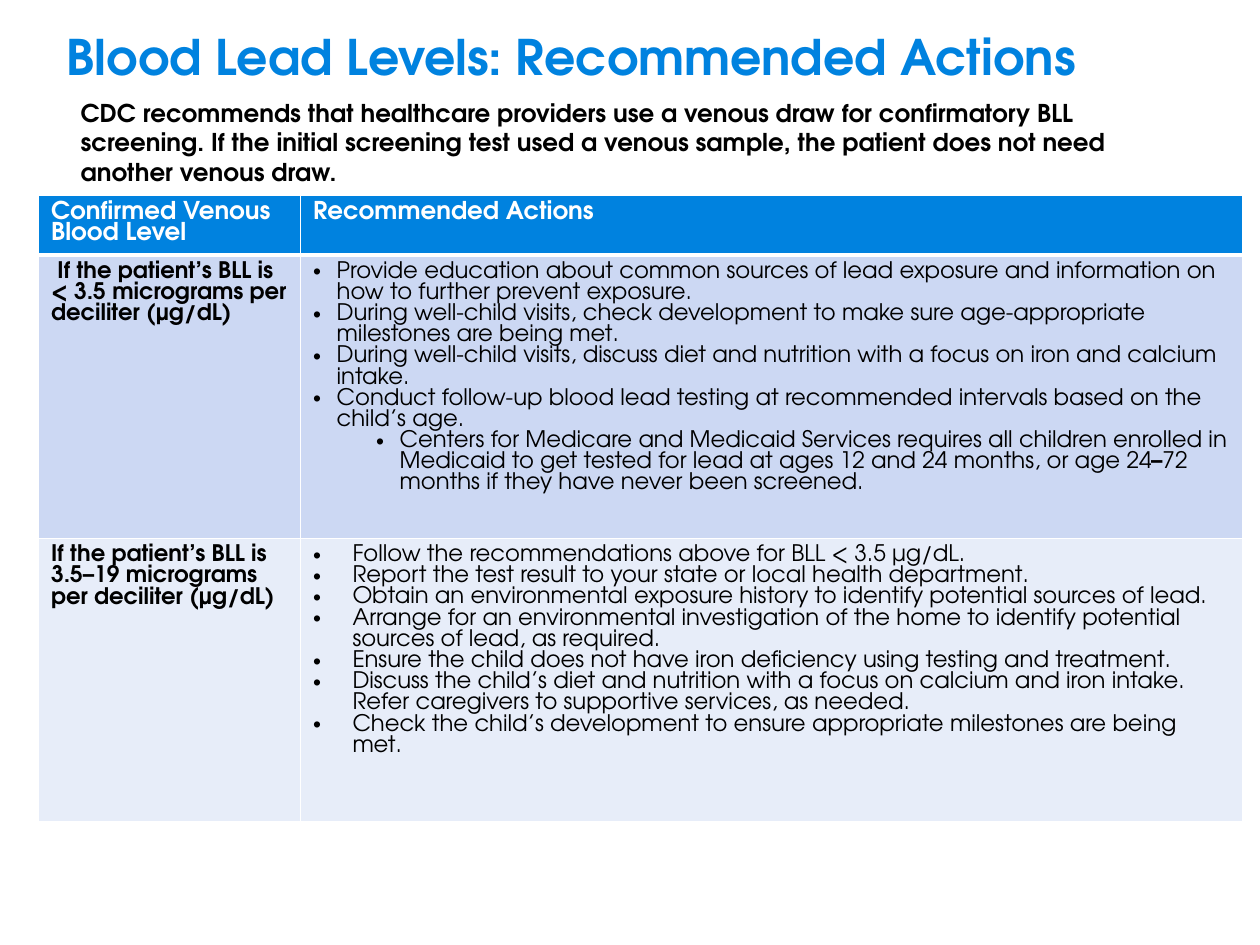
from lxml import etree
from pptx import Presentation
from pptx.dml.color import RGBColor
from pptx.enum.text import MSO_ANCHOR
from pptx.oxml.ns import qn
from pptx.util import Pt

MIDDLE, TOP = MSO_ANCHOR.MIDDLE, MSO_ANCHOR.TOP

THEME = {
    "font": "TeX Gyre Adventor",
    "blue": "0082DF", "white": "FFFFFF", "black": "000000",
    "bands": ["CCD8F3", "E7EDF9"],
    "title": 28, "lead": 14, "body": 13,
    "lead_gap": 16.75, "head_gap": 12.5, "body_gap": 12.1,
}

TITLE = "Blood Lead Levels: Recommended Actions"
INTRO = ("CDC recommends that healthcare providers use a venous draw for "
         "confirmatory BLL screening. If the initial screening test used a "
         "venous sample, the patient does not need another venous draw.")
HEADS = ["Confirmed Venous Blood Level", "Recommended Actions"]

# Each row: blood level, hanging indent, actions as (level, text or runs).
ROWS = [
    (" If the patient’s BLL is < 3.5 micrograms per deciliter (μg/dL)", 13.5, [
        (0, "Provide education about common sources of lead exposure and "
            "information on how to further prevent exposure."),
        (0, "During well-child visits, check development to make sure "
            "age-appropriate milestones are being met."),
        (0, "During well-child visits, discuss diet and nutrition with a "
            "focus on iron and calcium intake."),
        (0, "Conduct follow-up blood lead testing at recommended intervals "
            "based on the child’s age."),
        (1, [("Centers for Medicare and Medicaid Services requires all "
              "children enrolled in Medicaid to get tested for lead at ages "
              "12 and 24 months, or age 24", False),
             ("–", True),
             ("72 months if they have never been screened.", False)]),
    ]),
    ("If the patient’s BLL is 3.5–19 micrograms per deciliter (μg/dL)", 22.5, [
        (0, "Follow the recommendations above for BLL < 3.5 μg/dL."),
        (0, "Report the test result to your state or local health department."),
        (0, "Obtain an environmental exposure history to identify potential "
            "sources of lead."),
        (0, "Arrange for an environmental investigation of the home to "
            "identify potential sources of lead, as required."),
        (0, "Ensure the child does not have iron deficiency using testing "
            "and treatment."),
        (0, "Discuss the child’s diet and nutrition with a focus on calcium "
            "and iron intake. Refer caregivers to supportive services, as "
            "needed."),
        (0, "Check the child’s development to ensure appropriate milestones "
            "are being met."),
    ]),
]

COLS = [149.75, 538.5]
HEIGHTS = [34, 162, 162]
STEP = 36  # extra indent of a nested bullet


def write(para, text, size, color, bold, gap=None):
    """Fill a paragraph with a string, or with (text, bold) runs."""
    if isinstance(text, str):
        para.add_run().text = text
        para.font.bold = bold
    else:
        for part, strong in text:
            run = para.add_run()
            run.text = part
            run.font.bold = strong
    para.font.name = THEME["font"]
    para.font.size = Pt(size)
    para.font.color.rgb = RGBColor.from_string(color)
    if gap:
        para.line_spacing = Pt(gap)


def add_dot(para, level, hang):
    para.level = level
    props = para._p.get_or_add_pPr()
    props.set("marL", str(Pt(hang + level * STEP)))
    props.set("indent", str(-Pt(hang)))
    etree.SubElement(props, qn("a:buFont")).set("typeface", "Arial")
    etree.SubElement(props, qn("a:buChar")).set("char", "•")


def paint(cell, color, base=1):
    """Set fill and white borders; base is the bottom border's width."""
    cell.fill.solid()
    cell.fill.fore_color.rgb = RGBColor.from_string(color)
    props = cell._tc.get_or_add_tcPr()
    sides = [("a:lnL", 1), ("a:lnR", 1), ("a:lnT", 1), ("a:lnB", base)]
    for pos, (tag, width) in enumerate(sides):
        line = etree.Element(qn(tag), w=str(Pt(width)))
        fill = etree.SubElement(line, qn("a:solidFill"))
        etree.SubElement(fill, qn("a:srgbClr")).set("val", THEME["white"])
        props.insert(pos, line)


def add_text(slide, box, anchor):
    frame = slide.shapes.add_textbox(*map(Pt, box)).text_frame
    frame.word_wrap = True
    frame.vertical_anchor = anchor
    return frame.paragraphs[0]


def add_grid(slide):
    grid = slide.shapes.add_table(
        len(HEIGHTS), len(COLS), Pt(22), Pt(111.75),
        Pt(sum(COLS)), Pt(sum(HEIGHTS))).table
    for col, width in zip(grid.columns, COLS):
        col.width = Pt(width)
    for row, height in zip(grid.rows, HEIGHTS):
        row.height = Pt(height)

    for col, head in enumerate(HEADS):
        cell = grid.cell(0, col)
        paint(cell, THEME["blue"], 3)
        write(cell.text_frame.paragraphs[0], head, THEME["lead"],
              THEME["white"], True, THEME["head_gap"])

    style = THEME["body"], THEME["black"]
    gap = THEME["body_gap"]
    for row, (label, hang, acts) in enumerate(ROWS, 1):
        left, right = grid.cell(row, 0), grid.cell(row, 1)
        for cell in (left, right):
            paint(cell, THEME["bands"][row - 1])
        write(left.text_frame.paragraphs[0], label, *style, True, gap)
        frame = right.text_frame
        for pos, (level, text) in enumerate(acts):
            para = frame.add_paragraph() if pos else frame.paragraphs[0]
            add_dot(para, level, hang)
            write(para, text, *style, False, gap)


def main():
    deck = Presentation()
    deck.slide_width, deck.slide_height = Pt(720), Pt(540)
    slide = deck.slides.add_slide(deck.slide_layouts[6])
    write(add_text(slide, (31, 8.5, 648, 47), MIDDLE), TITLE,
          THEME["title"], THEME["blue"], True)
    add_grid(slide)
    intro = add_text(slide, (39, 52.5, 648, 378), TOP)
    write(intro, INTRO, THEME["lead"], THEME["black"], True, THEME["lead_gap"])
    intro.space_after = Pt(3)
    deck.save("out.pptx")


if __name__ == "__main__":
    main()
